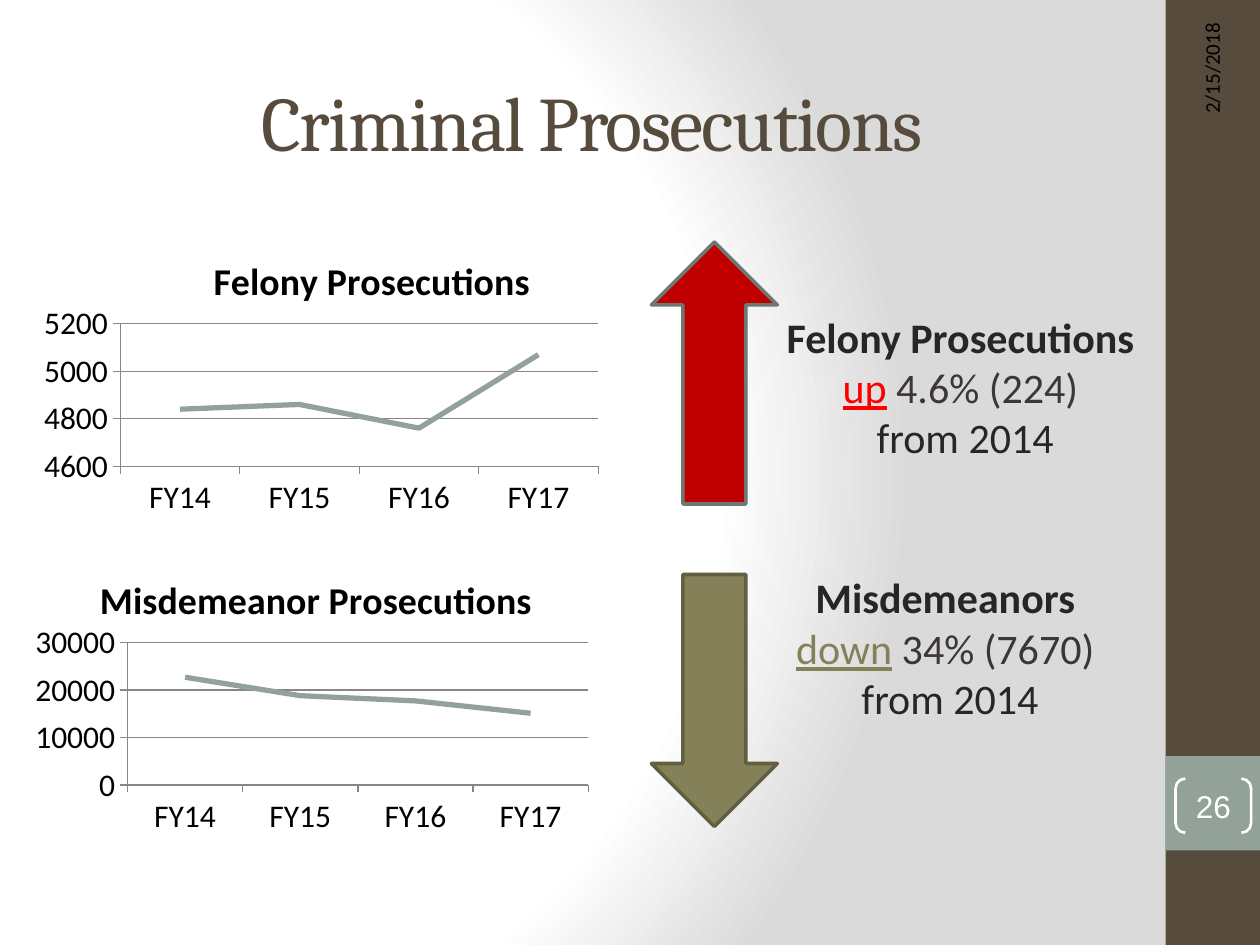
from pptx import Presentation
from pptx.chart.data import CategoryChartData
from pptx.dml.color import RGBColor
from pptx.enum.chart import XL_CHART_TYPE, XL_MARKER_STYLE, XL_TICK_MARK
from pptx.enum.shapes import MSO_SHAPE
from pptx.enum.text import MSO_ANCHOR, PP_ALIGN
from pptx.oxml import parse_xml
from pptx.oxml.ns import nsdecls, qn
from pptx.util import Inches, Pt

LINE = XL_CHART_TYPE.LINE
NO_MARK = XL_MARKER_STYLE.NONE
OUT, NO_TICK = XL_TICK_MARK.OUTSIDE, XL_TICK_MARK.NONE
RECT, BRACKET = MSO_SHAPE.RECTANGLE, MSO_SHAPE.DOUBLE_BRACKET
UP, DOWN = MSO_SHAPE.UP_ARROW, MSO_SHAPE.DOWN_ARROW
TOP, MIDDLE = MSO_ANCHOR.TOP, MSO_ANCHOR.MIDDLE
CENTER, RIGHT = PP_ALIGN.CENTER, PP_ALIGN.RIGHT

BLACK = RGBColor(0x00, 0x00, 0x00)
WHITE = RGBColor(0xFF, 0xFF, 0xFF)
BROWN = RGBColor(0x56, 0x4B, 0x3C)
SAGE = RGBColor(0x93, 0xA2, 0x99)
SLATE = RGBColor(0x6D, 0x78, 0x71)
OLIVE = RGBColor(0x84, 0x80, 0x58)
MOSS = RGBColor(0x62, 0x5F, 0x41)
CRIMSON = RGBColor(0xC0, 0x00, 0x00)
RED = RGBColor(0xFF, 0x00, 0x00)
INK = RGBColor(0x26, 0x26, 0x26)
PLUM = RGBColor(0x3C, 0x36, 0x38)
GREY = RGBColor(0x86, 0x86, 0x86)
YEARS = ("FY14", "FY15", "FY16", "FY17")


def add_run(para, text, size=24, font="Calibri", color=INK, bold=False,
            line=False, space=None):
    run = para.add_run()
    run.text = text
    face = run.font
    face.size, face.name, face.bold, face.underline = Pt(size), font, bold, line
    face.color.rgb = color
    if space is not None:
        run._r.get_or_add_rPr().set("spc", str(space))


def add_box(slide, box, anchor=TOP):
    shape = slide.shapes.add_textbox(*map(Inches, box))
    shape.text_frame.word_wrap = True
    shape.text_frame.vertical_anchor = anchor
    return shape


def add_shape(slide, kind, box, fill=None, line=None, width=0):
    shape = slide.shapes.add_shape(kind, *map(Inches, box))
    shape.shadow.inherit = False
    if fill is None:
        shape.fill.background()
    else:
        shape.fill.solid()
        shape.fill.fore_color.rgb = fill
    if line is None:
        shape.line.fill.background()
    else:
        shape.line.color.rgb = line
        shape.line.width = Pt(width)
    return shape


def set_back(slide):
    stops = "".join(
        f'<a:gs pos="{pos}"><a:srgbClr val="{color}"/></a:gs>'
        for pos, color in ((0, "FFFFFF"), (75000, "FFFFFF"), (100000, "DADADA")))
    slide._element.cSld.insert(0, parse_xml(
        f'<p:bg {nsdecls("p", "a")}><p:bgPr><a:gradFill rotWithShape="1">'
        f'<a:gsLst>{stops}</a:gsLst><a:path path="circle">'
        '<a:fillToRect l="20000" t="50000" r="100000" b="50000"/></a:path>'
        '</a:gradFill><a:effectLst/></p:bgPr></p:bg>'))


def add_side(slide, box):
    left, top, width, height = box
    add_shape(slide, RECT, box, BROWN)
    add_shape(slide, RECT, (left, top + 6, width, width), SAGE)
    date = add_box(slide, (left - 0.97, top + 1.22, 2.67, 0.4), MIDDLE)
    date.rotation = 270
    para = date.text_frame.paragraphs[0]
    para.alignment = RIGHT
    add_run(para, "2/15/2018", size=12, color=BLACK)
    badge = add_shape(slide, BRACKET, (left + 0.08, top + 6.18, 0.6, 0.43),
                      line=WHITE, width=1.5)
    badge.adjustments[0] = 0.18
    frame = badge.text_frame
    frame.margin_left = frame.margin_right = 0
    frame.margin_top = frame.margin_bottom = 0
    frame.vertical_anchor = MIDDLE
    frame.paragraphs[0].alignment = CENTER
    add_run(frame.paragraphs[0], "26", size=18, font="Arial", color=WHITE)


def add_title(slide, box):
    para = add_box(slide, box, MIDDLE).text_frame.paragraphs[0]
    para.alignment = CENTER
    add_run(para, "Criminal Prosecutions", size=44, font="Cambria",
            color=BROWN, space=-100)


def add_note(slide, box, head, word, color, change):
    frame = add_box(slide, box).text_frame
    lines = (
        ((head, {"bold": True}),),
        ((word, {"color": color, "line": True}), (" ", {}),
         (change, {"color": PLUM})),
        (("from 2014", {}),),
    )
    for i, runs in enumerate(lines):
        para = frame.add_paragraph() if i else frame.paragraphs[0]
        para.alignment = CENTER
        for text, style in runs:
            add_run(para, text, **style)


def set_layout(parent, index, **place):
    for old in parent.findall(qn("c:layout")):
        parent.remove(old)
    target = '<c:layoutTarget val="inner"/>' if "w" in place else ""
    modes = "".join(f'<c:{key}Mode val="edge"/>' for key in "xy")
    parts = "".join(f'<c:{key} val="{val}"/>' for key, val in place.items())
    parent.insert(index, parse_xml(
        f'<c:layout {nsdecls("c")}><c:manualLayout>{target}{modes}{parts}'
        '</c:manualLayout></c:layout>'))


def add_trend(slide, box, name, values, scale, head, plot):
    data = CategoryChartData()
    data.categories = YEARS
    data.add_series(name, values)
    chart = slide.shapes.add_chart(LINE, *map(Inches, box), data).chart
    chart.font.size, chart.font.name = Pt(18), "Calibri"
    chart.font.color.rgb = BLACK
    chart.has_legend = False
    chart.has_title = True
    title = chart.chart_title
    add_run(title.text_frame.paragraphs[0], name, size=21.6, color=BLACK,
            bold=True)
    title.include_in_layout = False
    set_layout(title._element, 1, x=head, y=0.1)
    x, width = plot
    set_layout(chart._chartSpace.chart.plotArea, 0, x=x, y=0.35, w=width, h=0.465)
    axis = chart.value_axis
    axis.minimum_scale, axis.maximum_scale, axis.major_unit = scale
    axis.has_major_gridlines = True
    for part in (axis, chart.category_axis, axis.major_gridlines):
        part.format.line.color.rgb = GREY
        part.format.line.width = Pt(0.75)
    for part in (axis, chart.category_axis):
        part.major_tick_mark, part.minor_tick_mark = OUT, NO_TICK
    chart.plots[0].vary_by_categories = False
    series = chart.plots[0].series[0]
    series.smooth = False
    series.marker.style = NO_MARK
    series.format.line.color.rgb = SAGE
    series.format.line.width = Pt(3)


def main():
    deck = Presentation()
    deck.slide_width, deck.slide_height = Inches(10), Inches(7.5)
    slide = deck.slides.add_slide(deck.slide_layouts[6])
    set_back(slide)
    add_side(slide, (9.25, 0, 0.75, 7.5))
    add_title(slide, (0.2, 0.33, 9, 1.25))
    add_note(slide, (5.32, 2.42, 4.68, 1.31), "Felony Prosecutions ",
             "up", RED, "4.6% (224) ")
    add_shape(slide, UP, (5.17, 1.92, 1, 2.08), CRIMSON, SLATE, 2)
    add_shape(slide, DOWN, (5.17, 4.56, 1, 2), OLIVE, MOSS, 2)
    add_note(slide, (5.5, 4.49, 4.08, 1.31), "Misdemeanors ",
             "down", OLIVE, "34% (7670) ")
    add_trend(slide, (0.27, 1.72, 4.57, 2.43), "Felony Prosecutions",
              (4840, 4860, 4760, 5070), (4600, 5200, 200), 0.3, (0.15, 0.83))
    add_trend(slide, (0.19, 4.25, 4.57, 2.43), "Misdemeanor Prosecutions",
              (22700, 18800, 17700, 15100), (0, 30000, 10000), 0.12, (0.18, 0.8))
    deck.save("out.pptx")


if __name__ == "__main__":
    main()
